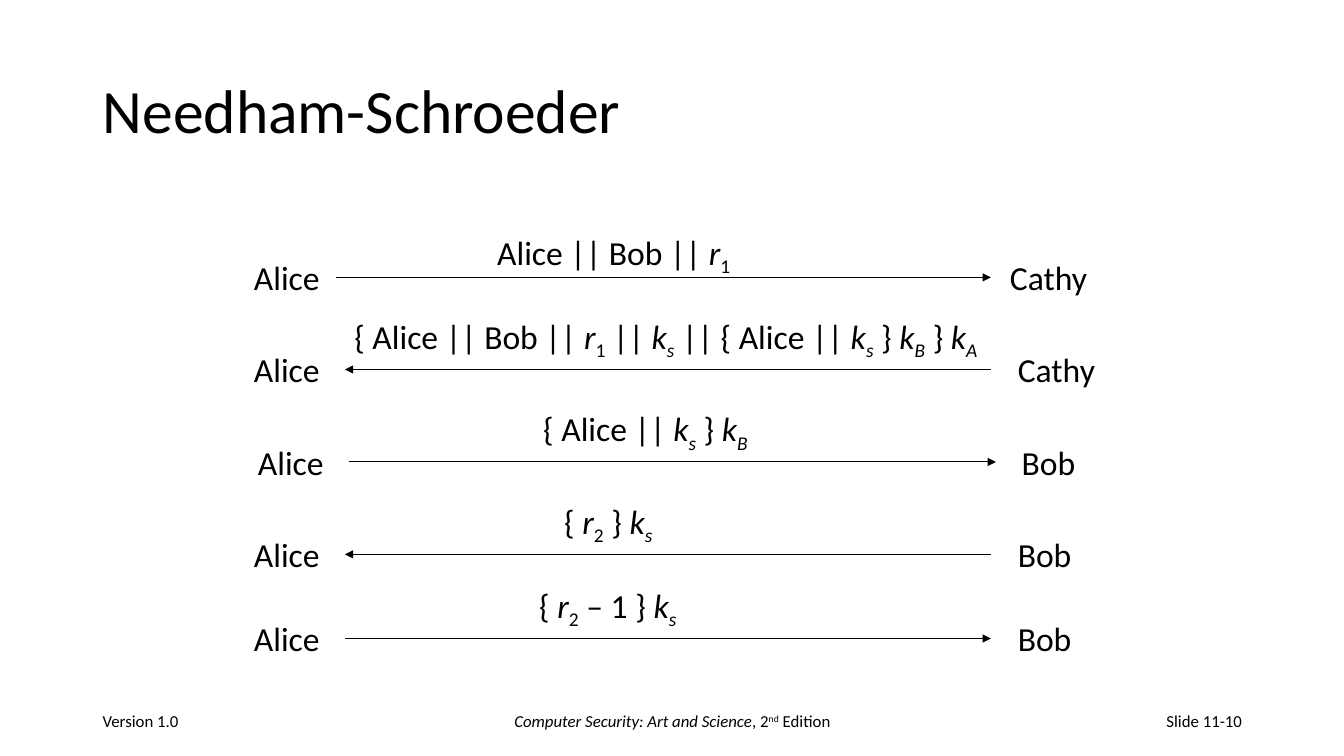
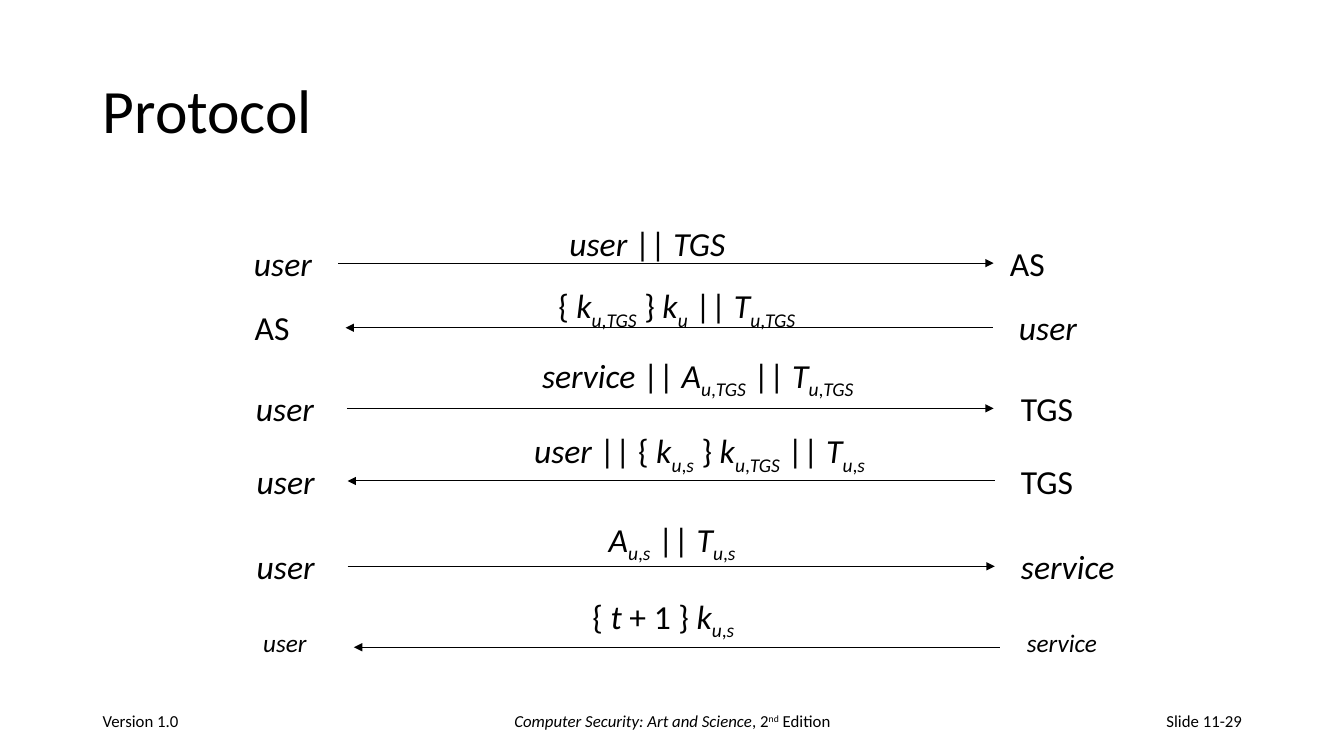
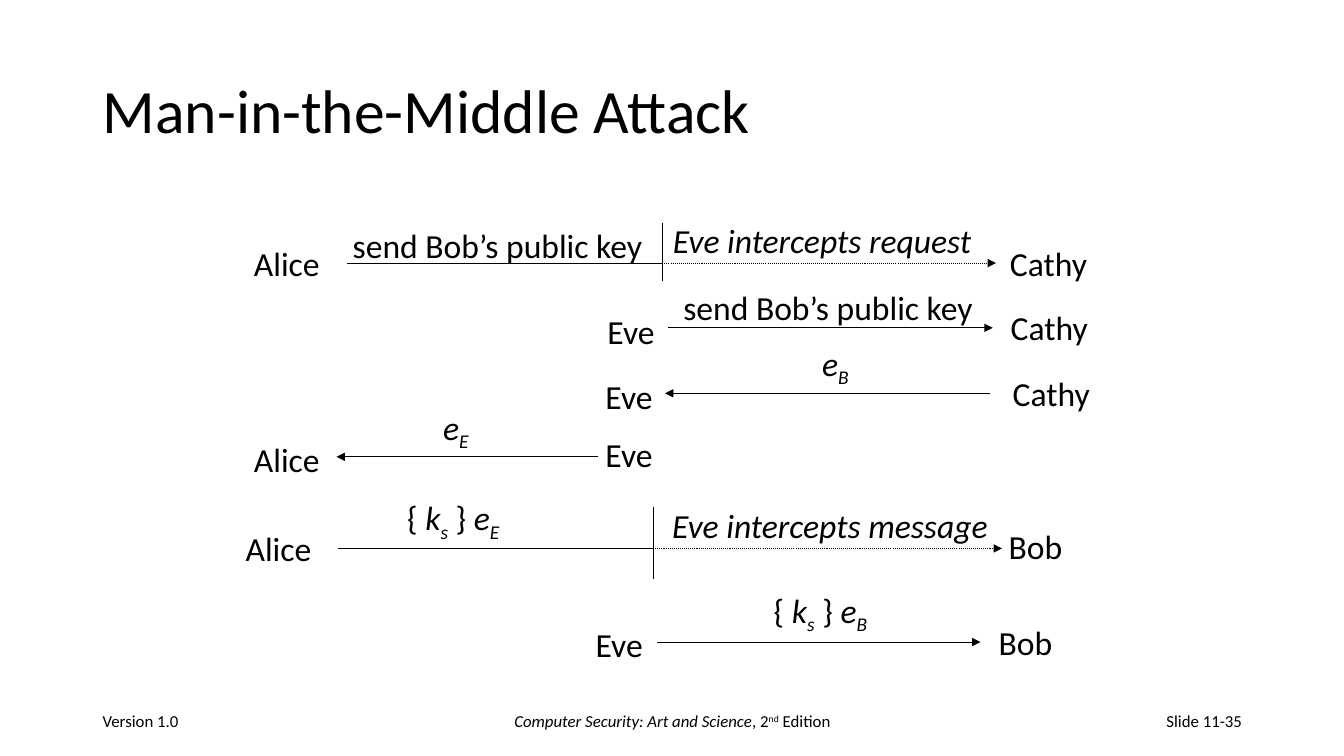
from collections import namedtuple
from itertools import groupby

from lxml import etree
from pptx import Presentation
from pptx.dml.color import RGBColor
from pptx.enum import dml, shapes, text
from pptx.oxml import ns
from pptx.util import Cm, Pt

BLACK = RGBColor(0x00, 0x00, 0x00)
WHITE = RGBColor(0xFF, 0xFF, 0xFF)
FONT = "Calibri"
BODY_SIZE = 24
BASELINES = {"_": -25000, "^": 30000}

SIDE_INSETS = 0.51
NAME_WIDTHS = {"Alice": 2.18, "Cathy": 2.46, "Bob": 1.88, "Eve": 1.73,
               "*user*": 1.98, "*service*": 2.9, "AS": 1.4, "TGS": 1.83}

FIT = {"word_wrap": False, "auto_size": text.MSO_AUTO_SIZE.SHAPE_TO_FIT_TEXT}
FIT_WRAPPED = {**FIT, "word_wrap": True}
FRAMED = {"word_wrap": True, "vertical_anchor": text.MSO_ANCHOR.MIDDLE}

LEFT, CENTER, RIGHT = text.PP_ALIGN.LEFT, text.PP_ALIGN.CENTER, text.PP_ALIGN.RIGHT
TO_RIGHT, TO_LEFT = "tailEnd", "headEnd"

# Lengths in cm. left, right: (name, x); note: (text, x, top, width);
# span: both ends of the arrow; rise: name tops above the arrow;
# cut: (x, top, bottom, note) where the message is intercepted.
Step = namedtuple("Step", "y left right note span arrow size rise cut",
                  defaults=(BODY_SIZE, (0.64, 0.64), None))

SLIDES = [
    ("Needham-Schroeder", 10, [
        Step(6.99, ("Alice", 6.15), ("Cathy", 25.2),
             ("Alice || Bob || *r*_1_", 12.28, 5.72, 6.48), (8.46, 24.97), TO_RIGHT),
        Step(9.31, ("Alice", 6.15), ("Cathy", 25.4),
             ("{ Alice || Bob || *r*_1_ || *k_s_* || { Alice || *k_s_* } *k_B_* } *k_A_*",
              8.68, 7.83, 16.48), (8.69, 24.97), TO_LEFT),
        Step(11.64, ("Alice", 6.25), ("Bob", 25.5),
             ("{ Alice || *k_s_* } *k_B_*", 13.44, 10.16, 5.77), (8.79, 25.1), TO_RIGHT),
        Step(13.97, ("Alice", 6.15), ("Bob", 25.4),
             ("{ *r*_2_ } *k_s_*", 13.97, 12.49, 2.82), (8.69, 24.97), TO_LEFT),
        Step(16.09, ("Alice", 6.15), ("Bob", 25.4),
             ("{ *r*_2_ – 1 } *k_s_*", 13.34, 14.61, 4.04), (8.69, 24.97), TO_RIGHT),
    ]),
    ("Protocol", 29, [
        Step(6.63, ("*user*", 6.15), ("AS", 25.2),
             ("*user* || *TGS*", 14.1, 5.49, 4.47), (8.53, 25.04), TO_RIGHT),
        Step(8.26, ("AS", 6.17), ("*user*", 25.43),
             ("{ *k_u*,*TGS_* } *k_u_* || *T_u*,*TGS_*", 13.82, 7.06, 6.83),
             (8.71, 25.02), TO_LEFT),
        Step(10.29, ("*user*", 6.2), ("TGS", 25.48),
             ("*service* || *A_u*,*TGS_* || *T_u*,*TGS_*", 13.41, 8.81, 8.74),
             (8.74, 25.04), TO_RIGHT),
        Step(12.12, ("*user*", 6.22), ("TGS", 25.48),
             ("*user* || { *k_u*,*s_* } *k_u*,*TGS_* || *T_u*,*s_*", 13.21, 10.72, 9.19),
             (8.76, 25.07), TO_LEFT),
        Step(14.27, ("*user*", 6.22), ("*service*", 25.48),
             ("*A_u*,*s_* || *T_u*,*s_*", 15.09, 12.95, 3.86), (8.76, 25.07), TO_RIGHT),
        Step(16.31, ("*user*", 6.38), ("*service*", 25.63),
             ("{ *t* + 1 } *k_u*,*s_*", 14.68, 14.88, 4.17), (8.92, 25.2), TO_LEFT, size=18),
    ]),
    ("Man-in-the-Middle Attack", 35, [
        Step(6.63, ("Alice", 6.15), ("Cathy", 25.2),
             ("send Bob’s public key", 8.64, 5.54, 7.87), (8.74, 25.1), TO_RIGHT,
             cut=(16.69, 5.61, 7.09, ("*Eve intercepts request*", 16.71, 5.41, 8.48))),
        Step(8.26, ("Eve", 15.06), ("Cathy", 25.22),
             ("send Bob’s public key", 16.97, 7.11, 7.87), (16.84, 25.02), TO_RIGHT,
             rise=(0.56, 0.64)),
        Step(9.91, ("Eve", 15.01), ("Cathy", 25.27),
             ("*e_B_*", 20.47, 8.51, 1.24), (16.76, 24.94), TO_LEFT, rise=(0.56, 0.64)),
        Step(11.51, ("Alice", 6.15), ("Eve", 15.01),
             ("*e_E_*", 10.92, 10.13, 1.19), (8.48, 15.06), TO_LEFT, rise=(0.58, 0.69)),
        Step(13.82, ("Alice", 5.94), ("Bob", 25.17),
             ("{ *k_s_* } *e_E_*", 10.01, 12.4, 2.92), (8.53, 25.25), TO_RIGHT,
             rise=(0.64, 0.69),
             cut=(16.46, 12.78, 14.58, ("*Eve intercepts message*", 16.69, 12.6, 8.81))),
        Step(16.18, ("Eve", 14.76), ("Bob", 24.92),
             ("{ *k_s_* } *e_B_*", 19.25, 14.73, 2.95), (16.56, 24.71), TO_RIGHT,
             rise=(0.58, 0.64)),
    ]),
]


def write(slide, words, x, top, width, height=1.27, size=BODY_SIZE, frame=FIT,
          align=LEFT, spacing=1.0):
    """Add a text box; * toggles italic, _ subscript and ^ superscript."""
    box = slide.shapes.add_textbox(Cm(x), Cm(top), Cm(width), Cm(height))
    for key, value in frame.items():
        setattr(box.text_frame, key, value)
    paragraph = box.text_frame.paragraphs[0]
    paragraph.alignment, paragraph.line_spacing = align, spacing
    italic, baseline = False, 0
    for is_mark, chars in groupby(words, key=lambda char: char in "*_^"):
        if is_mark:
            for mark in chars:
                if mark == "*":
                    italic = not italic
                else:
                    baseline = 0 if baseline else BASELINES[mark]
            continue
        run = paragraph.add_run()
        run.text = "".join(chars)
        run.font.color.rgb = BLACK
        for key, value in {"name": FONT, "size": Pt(size), "italic": italic}.items():
            setattr(run.font, key, value)
        if baseline:
            run._r.get_or_add_rPr().set("baseline", str(baseline))


def draw_line(slide, x1, y1, x2, y2, arrow=None, dash=None):
    line = slide.shapes.add_connector(
        shapes.MSO_CONNECTOR.STRAIGHT, Cm(x1), Cm(y1), Cm(x2), Cm(y2))
    line.line.color.rgb = BLACK
    line.line.width = Pt(0.75)
    if dash:
        line.line.dash_style = dash
    if arrow:
        etree.SubElement(line.line._get_or_add_ln(), ns.qn("a:" + arrow), type="triangle")
    etree.SubElement(line._element.spPr, ns.qn("a:effectLst"))


deck = Presentation()
deck.slide_width, deck.slide_height = Cm(33.87), Cm(19.05)

for title, number, steps in SLIDES:
    slide = deck.slides.add_slide(deck.slide_layouts[6])
    slide.background.fill.solid()
    slide.background.fill.fore_color.rgb = WHITE
    write(slide, title, 2.34, 1.02, 29.2, 3.68, size=44, frame=FRAMED, spacing=0.9)

    for step in steps:
        for (name, x), rise in zip((step.left, step.right), step.rise):
            scale = step.size / BODY_SIZE
            width = (NAME_WIDTHS[name] - SIDE_INSETS) * scale + SIDE_INSETS
            write(slide, name, x, step.y - rise, width, 1.27 * scale, size=step.size)
        write(slide, *step.note)

        start, end = step.span
        if step.cut:
            cut_x, cut_top, cut_bottom, cut_note = step.cut
            draw_line(slide, start, step.y, cut_x, step.y)
            draw_line(slide, cut_x, step.y, end, step.y, step.arrow, dml.MSO_LINE.ROUND_DOT)
            draw_line(slide, cut_x, cut_top, cut_x, cut_bottom)
            write(slide, *cut_note, frame=FIT_WRAPPED)
        else:
            draw_line(slide, start, step.y, end, step.y, step.arrow)

    for words, x, width, align in (
            ("Version 1.0", 2.34, 7.62, LEFT),
            ("*Computer Security: Art and Science*, 2^nd^ Edition", 11.23, 11.43, CENTER),
            (f"Slide 11-{number}", 23.93, 7.62, RIGHT)):
        write(slide, words, x, 17.65, width, 1.02, size=12, frame=FRAMED, align=align)

deck.save("out.pptx")
